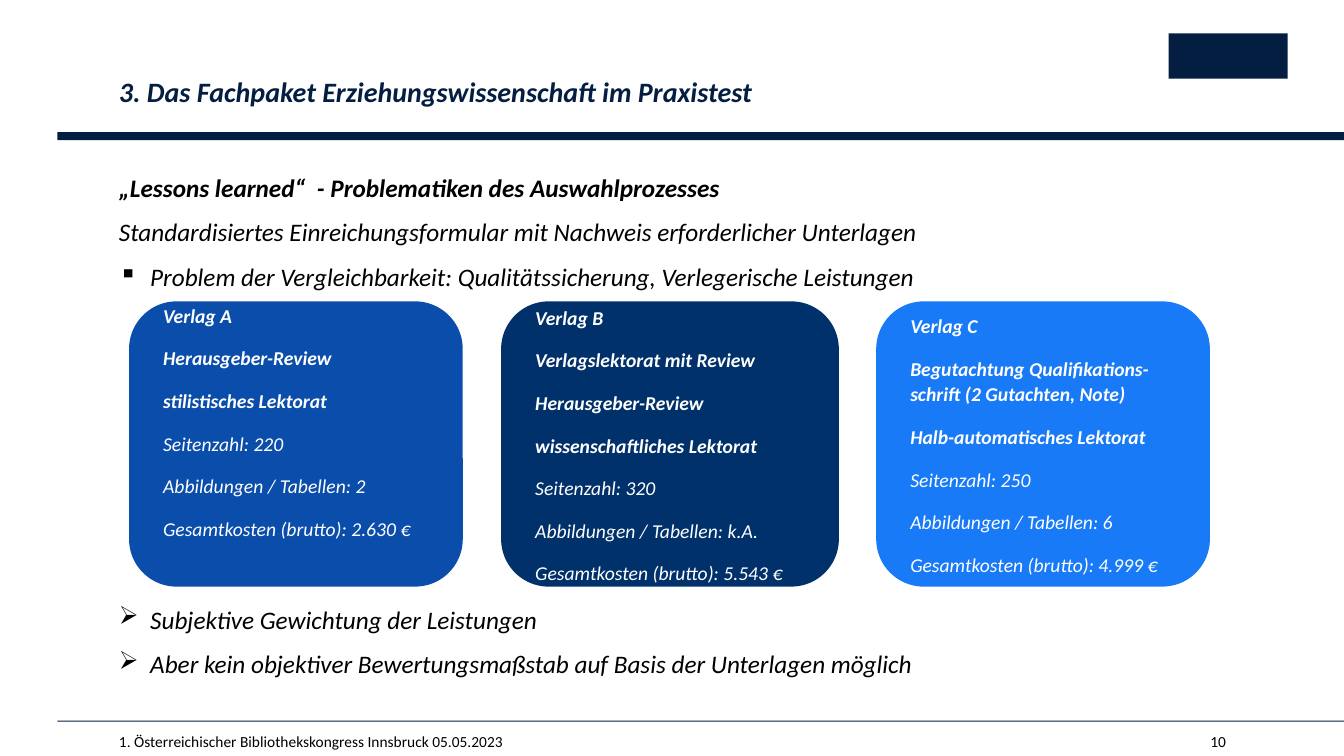
import pptx
import pptx.util
import pptx.dml.color
import pptx.enum.shapes
import pptx.enum.text
import lxml.etree

Inches, Pt = pptx.util.Inches, pptx.util.Pt
RGB = pptx.dml.color.RGBColor
MSO = pptx.enum.shapes.MSO_SHAPE
ANCHOR = pptx.enum.text.MSO_ANCHOR
ALIGN = pptx.enum.text.PP_ALIGN

NAVY = RGB(0x04, 0x1E, 0x42)
BLACK = RGB(0, 0, 0)
WHITE = RGB(0xFF, 0xFF, 0xFF)
BLUE = RGB(0x0A, 0x4D, 0xAA)
DEEP_BLUE = RGB(0x00, 0x31, 0x6A)
BRIGHT_BLUE = RGB(0x18, 0x7A, 0xF6)

MARGIN = 1.18
RULE_LEFT, RULE_WIDTH = 0.57, 12.77

BODY = [
    ("„Lessons learned“  - Problematiken des Auswahlprozesses", dict(bold=True)),
    ("Standardisiertes Einreichungsformular mit Nachweis erforderlicher Unterlagen", {}),
    ("Problem der Vergleichbarkeit: Qualitätssicherung, Verlegerische Leistungen",
     dict(bullet="▪")),
    ("Subjektive Gewichtung der Leistungen", dict(bullet="➢", before=213)),
    ("Aber kein objektiver Bewertungsmaßstab auf Basis der Unterlagen möglich",
     dict(bullet="➢")),
]

CARDS = [
    (1.28, 3.31, BLUE, 0.66,
     ["Verlag A", "Herausgeber-Review", "stilistisches Lektorat"],
     ["Seitenzahl: 220", "Abbildungen / Tabellen: 2", "Gesamtkosten (brutto): 2.630 €"]),
    (4.97, 3.35, DEEP_BLUE, 0.2,
     ["Verlag B", "Verlagslektorat mit Review", "Herausgeber-Review",
      "wissenschaftliches Lektorat"],
     ["Seitenzahl: 320", "Abbildungen / Tabellen: k.A.", "Gesamtkosten (brutto): 5.543 €"]),
    (8.69, 3.31, BRIGHT_BLUE, 0.2,
     ["Verlag C", "Begutachtung Qualifikations-schrift (2 Gutachten, Note)",
      "Halb-automatisches Lektorat"],
     ["Seitenzahl: 250", "Abbildungen / Tabellen: 6", "Gesamtkosten (brutto): 4.999 €"]),
]


def add_text(tf, text, size=18, color=BLACK, bold=False, italic=True, align=ALIGN.LEFT,
             spacing=1.1, before=0, after=8, bullet=None):
    """Write one formatted paragraph into a text frame."""
    p = tf.paragraphs[0] if not tf.text else tf.add_paragraph()
    p.alignment, p.line_spacing = align, spacing
    p.space_before, p.space_after = Pt(before), Pt(after)
    if bullet:
        pPr = p._p.get_or_add_pPr()
        pPr.set("marL", str(Inches(0.31)))
        pPr.set("indent", str(-Inches(0.31)))
        bu = lxml.etree.SubElement(pPr, pptx.oxml.ns.qn("a:buChar"))
        bu.set("char", bullet)
    r = p.add_run()
    r.text = text
    r.font.name, r.font.size = "Calibri", Pt(size)
    r.font.bold, r.font.italic = bold, italic
    r.font.color.rgb = color


def set_insets(tf, left=0, top=0, right=0, bottom=0):
    """Set the four text margins in inches."""
    tf.margin_left, tf.margin_top = Inches(left), Inches(top)
    tf.margin_right, tf.margin_bottom = Inches(right), Inches(bottom)


def add_box(s, x, y, w, h, right=0, wrap=True):
    """Add a text box and return its text frame."""
    tf = s.shapes.add_textbox(*map(Inches, (x, y, w, h))).text_frame
    tf.word_wrap = wrap
    set_insets(tf, right=right)
    return tf


def add_filled(s, kind, x, y, w, h, color):
    """Add a flat filled shape without outline."""
    sp = s.shapes.add_shape(kind, *map(Inches, (x, y, w, h)))
    sp.shadow.inherit = False
    sp.fill.solid()
    sp.fill.fore_color.rgb = color
    sp.line.fill.background()
    return sp


def add_header(s, x, y, w, h):
    """Place the title, the logo block and the thick rule."""
    add_filled(s, MSO.RECTANGLE, RULE_LEFT, y + 0.6, RULE_WIDTH, 0.08, NAVY)
    add_filled(s, MSO.RECTANGLE, 11.59, y - 0.38, 1.18, 0.45, NAVY)
    add_text(add_box(s, x, y, w, h, right=0.39),
             "3. Das Fachpaket Erziehungswissenschaft im Praxistest",
             size=20, color=NAVY, bold=True)


def add_body(s, x, y, w, h):
    """Place the body text, leaving a gap for the cards."""
    tf = add_box(s, x, y, w, h, right=0.39)
    for text, style in BODY:
        add_text(tf, text, **style)


def add_card(s, x, y, w, h, color, bottom, heads, facts):
    """Place one publisher card with bold heads and plain facts."""
    tf = add_filled(s, MSO.ROUNDED_RECTANGLE, x, y, w, h, color).text_frame
    tf.word_wrap = True
    tf.vertical_anchor = ANCHOR.MIDDLE
    set_insets(tf, 0.2, 0.2, 0.2, bottom)
    for text in heads + facts:
        add_text(tf, text, size=14, color=WHITE, bold=text in heads, after=12)


def add_footer(s, x, y, w, h):
    """Place the thin rule, the event name and the page number."""
    add_filled(s, MSO.RECTANGLE, RULE_LEFT, y - 0.11, RULE_WIDTH, 0.01, NAVY)
    style = dict(size=11, italic=False, spacing=1.0, after=0)
    add_text(add_box(s, x, y, 5.38, h),
             "1. Österreichischer Bibliothekskongress Innsbruck 05.05.2023", **style)
    add_text(add_box(s, x + w - 0.16, y, 0.16, h, wrap=False), "10",
             align=ALIGN.RIGHT, **style)


def main():
    """Build and save the slide."""
    prs = pptx.Presentation()
    prs.slide_width, prs.slide_height = Inches(13.33), Inches(7.5)
    s = prs.slides.add_slide(prs.slide_layouts[6])
    add_header(s, MARGIN, 0.71, 9.69, 0.37)
    add_body(s, MARGIN, 1.68, 10.98, 5.25)
    add_footer(s, MARGIN, 7.26, 10.98, 0.19)
    for x, w, color, bottom, heads, facts in CARDS:
        add_card(s, x, 2.99, w, 2.83, color, bottom, heads, facts)
    prs.save("out.pptx")


if __name__ == "__main__":
    main()
